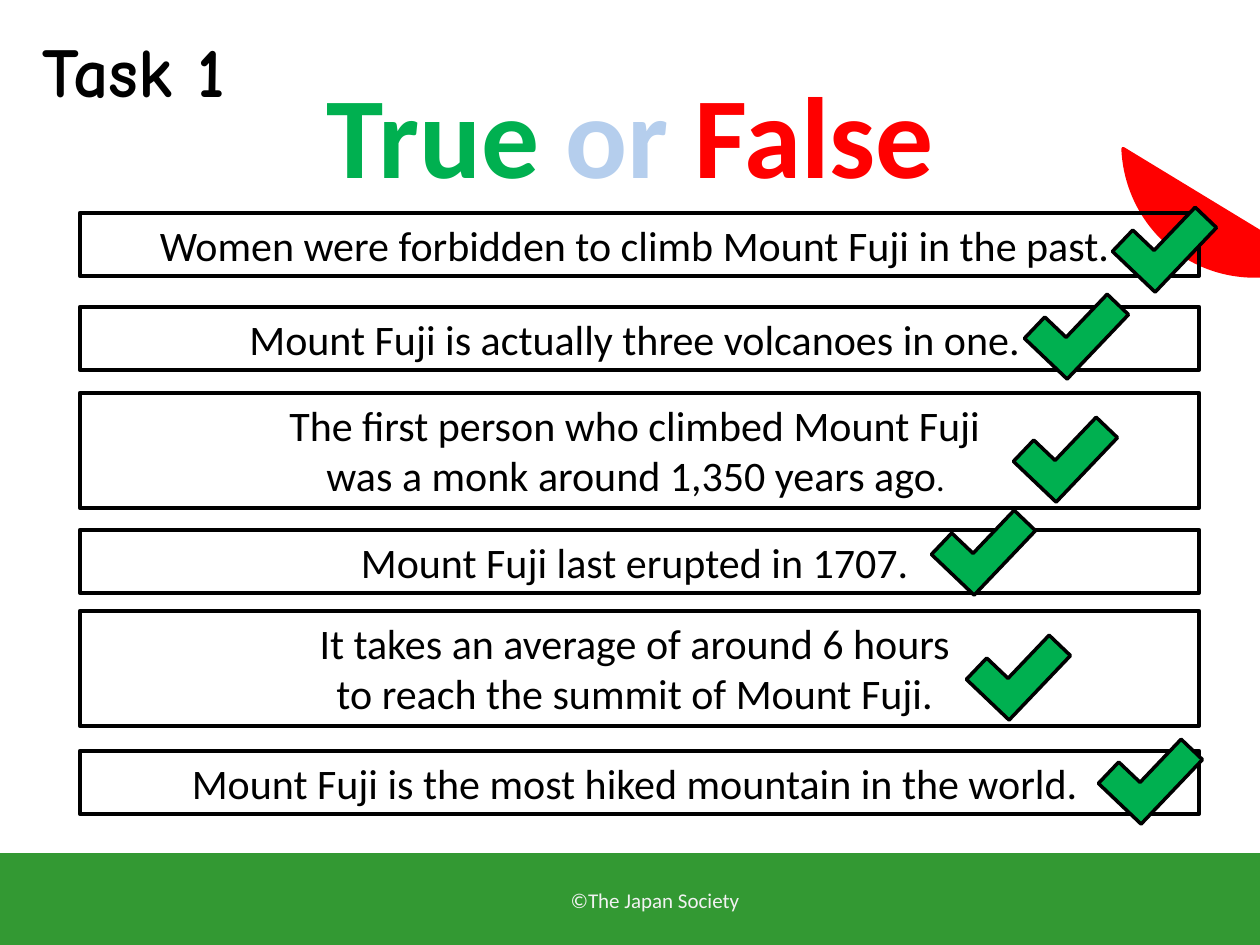
import pptx
import pptx.util
import pptx.dml.color
import pptx.enum.shapes
import pptx.enum.text

SCALE = 914400 / 126
WIDE, HIGH = 1260, 945
KIND = pptx.enum.shapes.MSO_SHAPE
INK = {
    "black": "000000",
    "red": "FF0000",
    "lawn": "339933",
    "green": "00B050",
    "sky": "B5CEED",
    "pale": "F2F2F2",
}
ROWS = [
    (213, 63, ["Women were forbidden to climb Mount Fuji in the past. "], (1040, -3)),
    (307, 63, ["Mount Fuji is actually three volcanoes in one. "], (952, -10)),
    (393, 115, [
        "The first person who climbed Mount Fuji ",
        [("was a monk around 1,350 years ago", {}), (". ", {"size": 19.5})],
    ], (941, 27)),
    (530, 63, ["Mount Fuji last erupted in 1707. "], (859, -17)),
    (611, 115, [
        "It takes an average of around 6 hours ",
        "to reach the summit of Mount Fuji. ",
    ], (894, 27)),
    (751, 63, ["Mount Fuji is the most hiked mountain in the world. "], (1026, -9)),
]


def px(size):
    return pptx.util.Emu(round(size * SCALE))


def tint(name):
    return pptx.dml.color.RGBColor.from_string(INK[name])


def write(shape, lines, size=24, color="black", face="Calibri", bold=False,
          wrap=True, anchor="TOP"):
    frame = shape.text_frame
    frame.word_wrap = wrap
    frame.vertical_anchor = getattr(pptx.enum.text.MSO_ANCHOR, anchor)
    for index, line in enumerate(lines):
        para = frame.add_paragraph() if index else frame.paragraphs[0]
        para.alignment = pptx.enum.text.PP_ALIGN.CENTER
        parts = [(line, {})] if isinstance(line, str) else line
        for words, look in parts:
            run = para.add_run()
            run.text = words
            run.font.name = face
            run.font.bold = bold
            run.font.size = pptx.util.Pt(look.get("size", size))
            run.font.color.rgb = tint(look.get("color", color))


def label(slide, box, lines, **look):
    area = slide.shapes.add_textbox(*map(px, box))
    write(area, lines, **look)


def draw(slide, kind, box, fill=None, line="black", weight=2, turn=0):
    shape = slide.shapes.add_shape(kind, *map(px, box))
    shape.shadow.inherit = False
    shape.rotation = turn
    if fill:
        shape.fill.solid()
        shape.fill.fore_color.rgb = tint(fill)
    else:
        shape.fill.background()
    shape.line.color.rgb = tint(line)
    shape.line.width = pptx.util.Pt(weight)
    return shape


def sun(slide, box):
    disc = draw(slide, KIND.CHORD, box, "red", "red", turn=32.9)
    disc.adjustments[0] = 20.16
    disc.adjustments[1] = 85.93


def footer(slide, box):
    left, top, width, height = box
    draw(slide, KIND.RECTANGLE, box, "lawn", "lawn")
    label(slide, (left + 25, top + 20, width, 50), ["©The Japan Society"],
          size=12, color="pale", anchor="MIDDLE")


def header(slide, box):
    left, top, width, height = box
    label(slide, (left - 15, top + 21, 297, 97), ["Task 1"],
          size=40, face="Comic Neue", bold=True)
    title = [("True", {"color": "green"}), (" or ", {"color": "sky"}),
             ("False", {"color": "red"})]
    label(slide, (left + 311, top + 57, 639, 152), [title],
          size=66, bold=True, wrap=False)


def fact(slide, box, lines, shift):
    left, top, width, height = box
    frame = draw(slide, KIND.RECTANGLE, box, weight=2.5)
    write(frame, lines)
    draw(slide, KIND.CORNER, (left + shift[0], top + shift[1], 89, 59),
         "green", turn=313.6)


def main():
    deck = pptx.Presentation()
    deck.slide_width, deck.slide_height = px(WIDE), px(HIGH)
    slide = deck.slides.add_slide(deck.slide_layouts[6])
    sun(slide, (1124, 2, 268, 275))
    footer(slide, (0, 855, WIDE, 90))
    header(slide, (0, 0, WIDE, 210))
    for top, height, lines, shift in ROWS:
        fact(slide, (80, top, 1119, height), lines, shift)
    deck.save("out.pptx")


if __name__ == "__main__":
    main()
